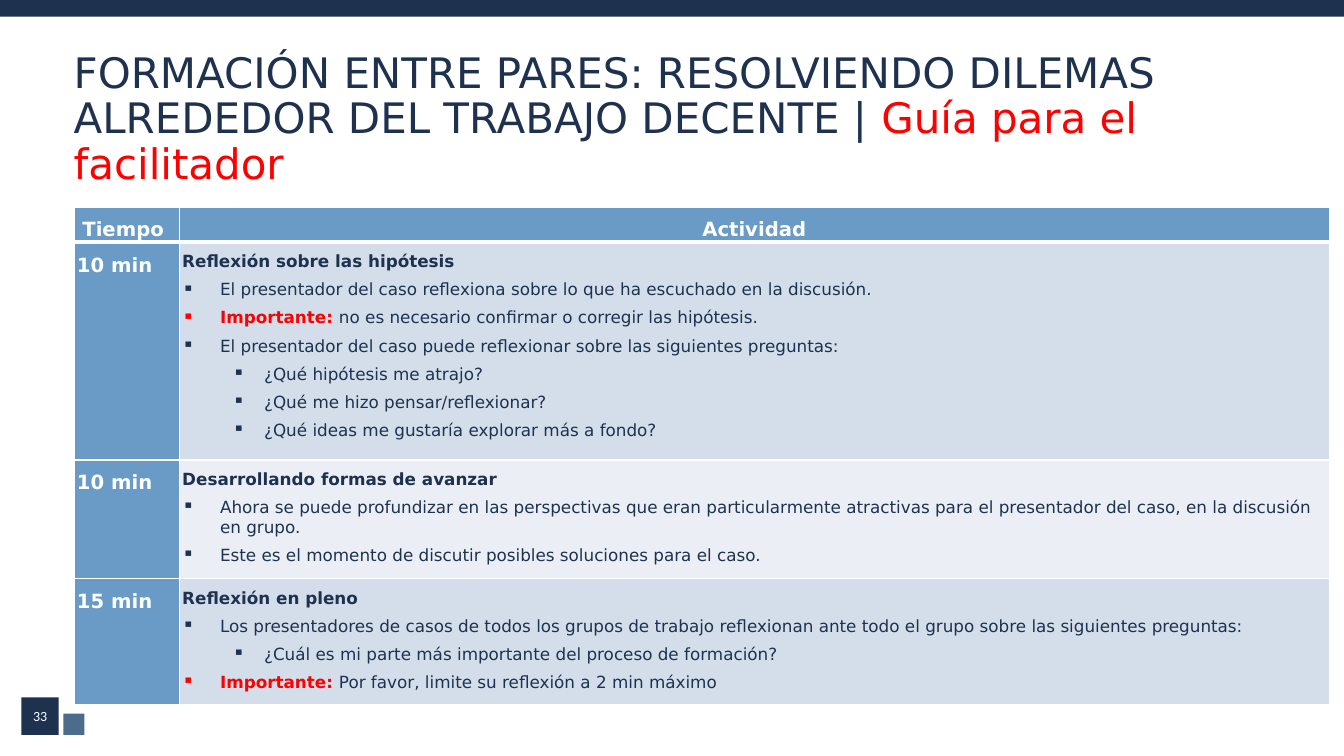
from lxml import etree
from pptx import Presentation
from pptx.dml.color import RGBColor
from pptx.enum import shapes, text
from pptx.oxml import ns
from pptx.util import Pt

NAVY = RGBColor(0x1E, 0x32, 0x50)
SLATE = RGBColor(0x4D, 0x6B, 0x8B)
BLUE = RGBColor(0x69, 0x9B, 0xC6)
PALE = RGBColor(0xD4, 0xDE, 0xEA)
LIGHT = RGBColor(0xEB, 0xEF, 0xF5)
RED = RGBColor(0xFF, 0, 0)
WHITE = RGBColor(0xFF, 0xFF, 0xFF)

FONT = "DejaVu Sans"
LABEL = dict(size=Pt(14), bold=True, color=WHITE)
HEADING = dict(size=Pt(12), bold=True, color=NAVY)
BODY = dict(size=Pt(12), bold=False, color=NAVY)
WARNING = dict(size=Pt(12), bold=True, color=RED)
INDENTS = [(27, -27), (58.5, -22.5)]  # left margin and hanging indent by level

# Each activity: time, heading, bullets as (level, warning, text)
ACTIVITIES = [
    ("10 min", "Reflexión sobre las hipótesis", [
        (0, "", "El presentador del caso reflexiona sobre lo que ha escuchado en la discusión."),
        (0, "Importante: ", "no es necesario confirmar o corregir las hipótesis."),
        (0, "", "El presentador del caso puede reflexionar sobre las siguientes preguntas:"),
        (1, "", "¿Qué hipótesis me atrajo?"),
        (1, "", "¿Qué me hizo pensar/reflexionar?"),
        (1, "", "¿Qué ideas me gustaría explorar más a fondo?"),
    ]),
    ("10 min", "Desarrollando formas de avanzar", [
        (0, "", "Ahora se puede profundizar en las perspectivas que eran particularmente "
                "atractivas para el presentador del caso, en la discusión en grupo."),
        (0, "", "Este es el momento de discutir posibles soluciones para el caso."),
    ]),
    ("15 min", "Reflexión en pleno", [
        (0, "", "Los presentadores de casos de todos los grupos de trabajo reflexionan "
                "ante todo el grupo sobre las siguientes preguntas:"),
        (1, "", "¿Cuál es mi parte más importante del proceso de formación?"),
        (0, "Importante: ", "Por favor, limite su reflexión a 2 min máximo"),
    ]),
]


def set_attrs(obj, **values):
    for name, value in values.items():
        setattr(obj, name, value)


def place(sp, left, top, width, height):
    set_attrs(sp, left=Pt(left), top=Pt(top), width=Pt(width), height=Pt(height))


def add_run(p, words, color, name=FONT, **font):
    r = p.add_run()
    r.text = words
    set_attrs(r.font, name=name, **font)
    r.font.color.rgb = color


def add_block(slide, color, *box):
    sp = slide.shapes.add_shape(shapes.MSO_SHAPE.RECTANGLE, *map(Pt, box))
    sp.shadow.inherit = False
    sp.fill.solid()
    sp.fill.fore_color.rgb = color
    sp.line.fill.background()


def add_title(slide):
    sp = slide.shapes.title
    place(sp, 45.4, 33.8, 880, 68.4)
    tf = sp.text_frame
    set_attrs(tf, word_wrap=True, auto_size=text.MSO_AUTO_SIZE.NONE,
              vertical_anchor=text.MSO_ANCHOR.TOP)
    p = tf.paragraphs[0]
    set_attrs(p, alignment=text.PP_ALIGN.LEFT, line_spacing=0.9)
    add_run(p, "FORMACIÓN ENTRE PARES: RESOLVIENDO DILEMAS ALREDEDOR "
               "DEL TRABAJO DECENTE | ", NAVY, size=Pt(30))
    add_run(p, "Guía para el facilitador", RED, size=Pt(30))


def add_page_number(slide, number):
    sp = slide.shapes.add_textbox(Pt(5), Pt(503.3), Pt(47.5), Pt(16.6))
    tf = sp.text_frame
    set_attrs(tf, word_wrap=True, vertical_anchor=text.MSO_ANCHOR.MIDDLE,
              margin_top=0, margin_bottom=0)
    p = tf.paragraphs[0]
    p.alignment = text.PP_ALIGN.CENTER
    add_run(p, number, WHITE, name="Calibri", size=Pt(10))


def add_bullet(tf, level, warning, words):
    p = tf.add_paragraph()
    set_attrs(p, level=level, space_before=Pt(6))
    margin, indent = INDENTS[level]
    pPr = p._p.get_or_add_pPr()
    pPr.set("marL", str(Pt(margin)))
    pPr.set("indent", str(Pt(indent)))
    etree.SubElement(pPr, ns.qn("a:buChar")).set("char", "▪")
    if warning:
        add_run(p, warning, **WARNING)
    add_run(p, words, **BODY)


def set_borders(cell, bottom):
    tcPr = cell._tc.get_or_add_tcPr()
    widths = {"a:lnL": 1, "a:lnR": 1, "a:lnT": 1, "a:lnB": bottom}
    for i, (tag, width) in enumerate(widths.items()):
        ln = etree.Element(ns.qn(tag), w=str(Pt(width)))
        fill = etree.SubElement(ln, ns.qn("a:solidFill"))
        etree.SubElement(fill, ns.qn("a:srgbClr")).set("val", str(WHITE))
        tcPr.insert(i, ln)


def fill_cell(cell, color, words, font, align=text.PP_ALIGN.LEFT, bottom=1):
    """Format a cell and write its first paragraph."""
    set_attrs(cell, margin_left=Pt(2.2), margin_right=Pt(2.2), margin_top=0, margin_bottom=0)
    cell.fill.solid()
    cell.fill.fore_color.rgb = color
    set_borders(cell, bottom)
    p = cell.text_frame.paragraphs[0]
    set_attrs(p, alignment=align, line_spacing=1.5, space_before=Pt(6))
    add_run(p, words, **font)


def add_schedule(slide):
    widths, heights = [75.2, 821.6], [23.2, 155.6, 84.8, 90]
    frame = slide.shapes.add_table(len(heights), len(widths), Pt(52.8), Pt(147.8),
                                   Pt(sum(widths)), Pt(sum(heights)))
    table = frame.table
    set_attrs(table, first_row=False, horz_banding=False)
    for column, width in zip(table.columns, widths):
        column.width = Pt(width)
    for row, height in zip(table.rows, heights):
        row.height = Pt(height)
    for i, words in enumerate(["Tiempo ", "Actividad"]):
        fill_cell(table.cell(0, i), BLUE, words, LABEL, text.PP_ALIGN.CENTER, bottom=3)
    for i, (time, heading, bullets) in enumerate(ACTIVITIES, 1):
        fill_cell(table.cell(i, 0), BLUE, time, LABEL, text.PP_ALIGN.JUSTIFY)
        activity = table.cell(i, 1)
        fill_cell(activity, PALE if i % 2 else LIGHT, heading, HEADING)
        for bullet in bullets:
            add_bullet(activity.text_frame, *bullet)


def main():
    prs = Presentation()
    set_attrs(prs, slide_width=Pt(960), slide_height=Pt(540))
    slide = prs.slides.add_slide(prs.slide_layouts[5])
    add_block(slide, NAVY, 0, 0, 960, 12)
    add_block(slide, NAVY, 15.2, 498.2, 26.8, 26.8)
    add_block(slide, SLATE, 45.2, 509.8, 15.2, 15.2)
    add_title(slide)
    add_page_number(slide, "33")
    add_schedule(slide)
    prs.save("out.pptx")


if __name__ == "__main__":
    main()
